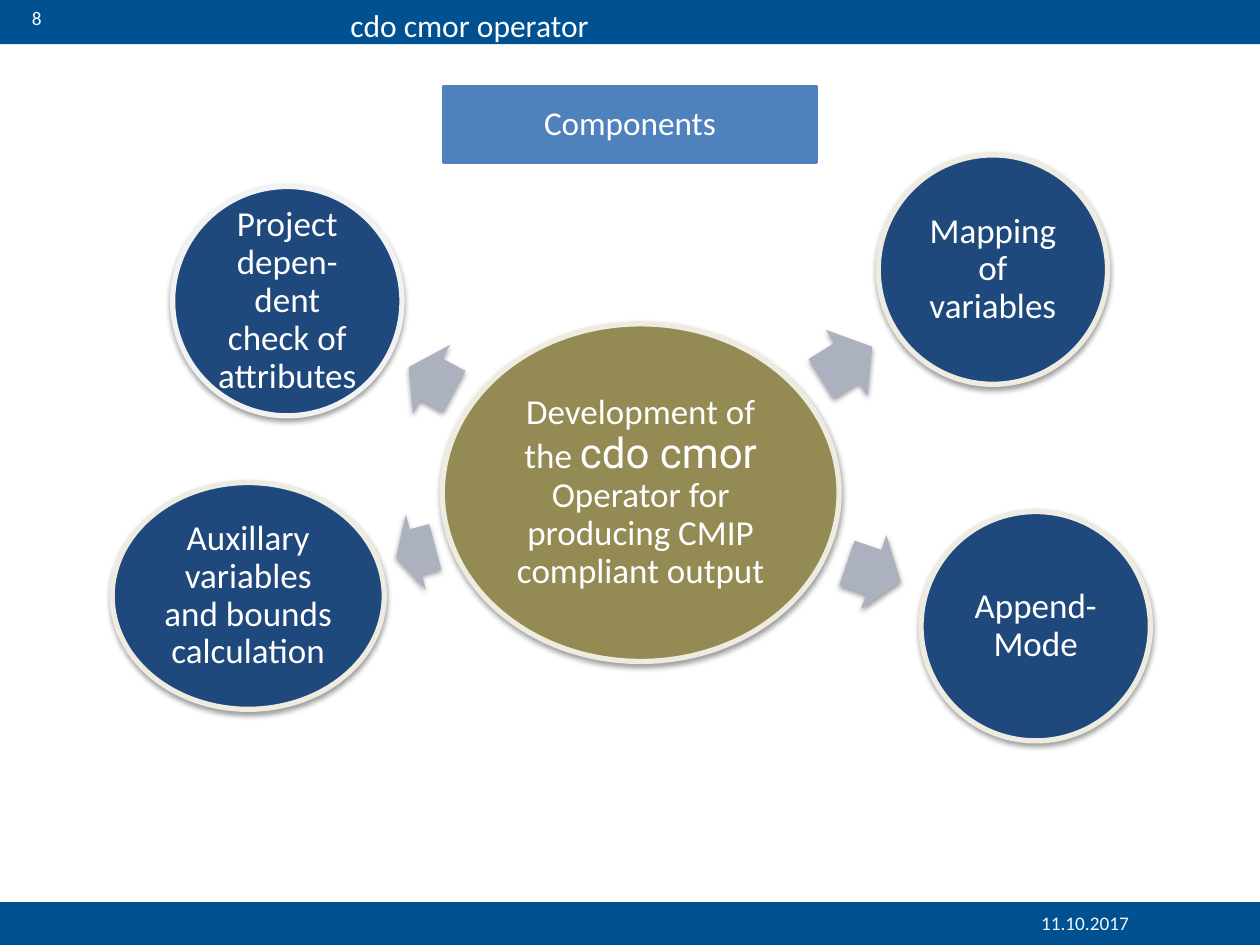
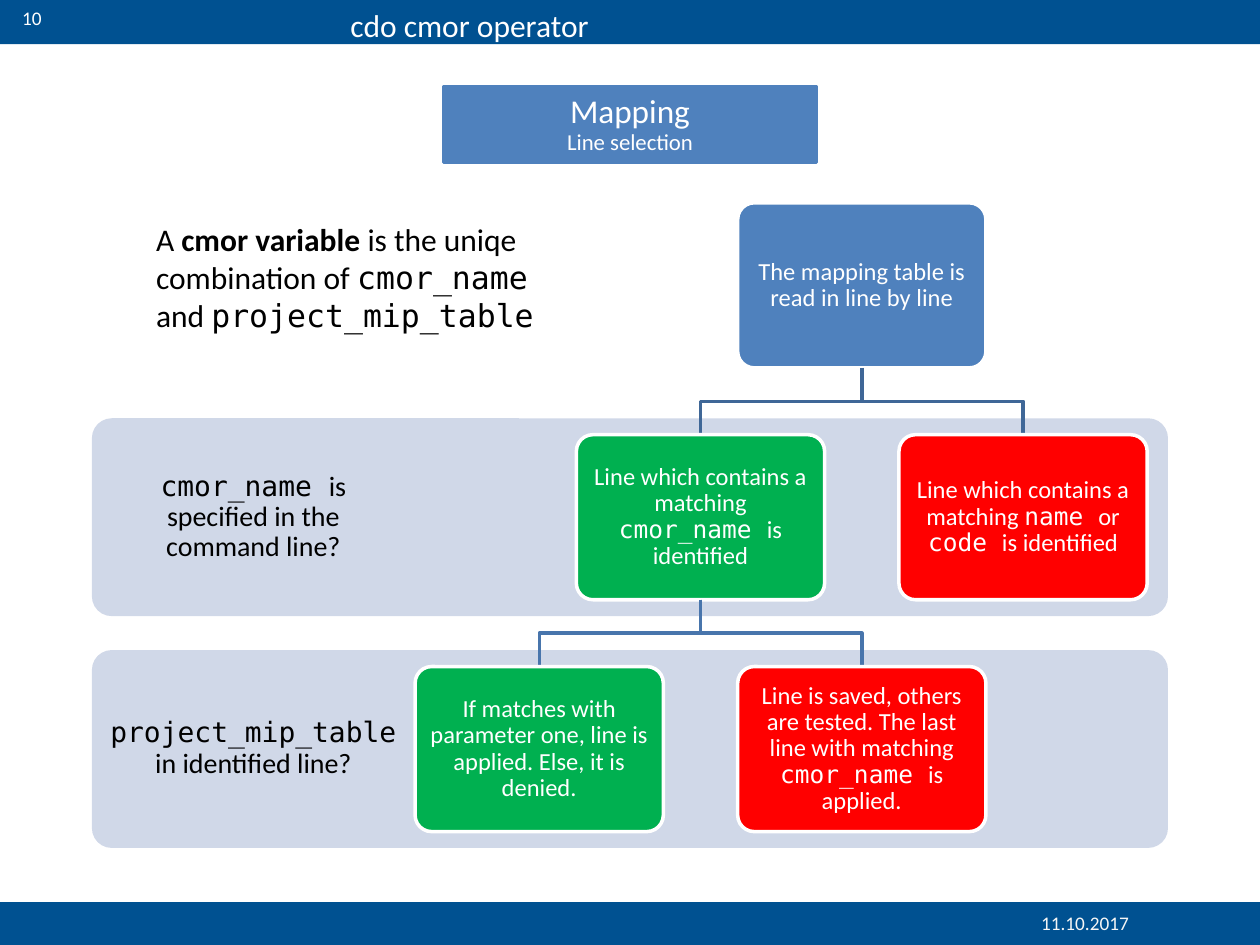
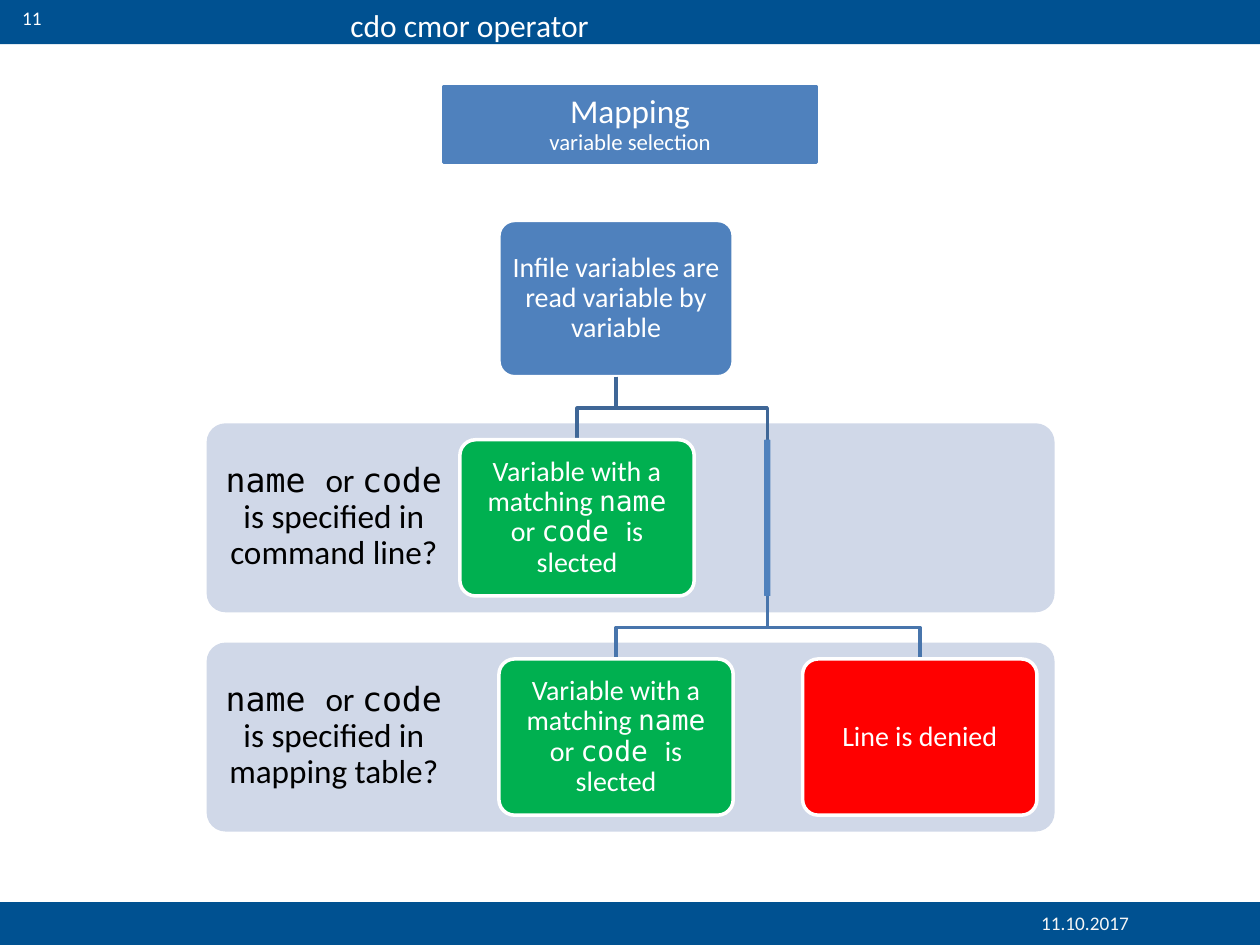
from dataclasses import dataclass

from lxml import etree
from pptx import Presentation
from pptx.dml.color import RGBColor
from pptx.enum.shapes import MSO_SHAPE as Shape
from pptx.enum.text import MSO_ANCHOR as Anchor, MSO_AUTO_SIZE as AutoSize, PP_ALIGN as Align
from pptx.oxml.ns import qn
from pptx.util import Inches, Pt


@dataclass(frozen=True)
class Theme:
    band: str = "005191"
    white: str = "FFFFFF"
    date: str = "F6F6F6"
    black: str = "000000"
    blue: str = "4F81BD"
    navy: str = "1F497D"
    olive: str = "948A54"
    cream: str = "EEECE1"
    pale: str = "F2F2F2"
    arrow: str = "ACB1BF"
    lane: str = "D0D8E8"
    yes: str = "00B050"
    no: str = "FF0000"
    links: tuple = ("3F6797", "4875AC")
    font: str = "Calibri"
    mono: str = "DejaVu Sans Mono"
    accent: str = "Roboto"
    small: int = 11
    subheading: int = 13
    fine: int = 14
    medium: int = 16
    title: int = 18
    heading: int = 19
    circle: int = 20
    large: int = 24


THEME = Theme()


@dataclass(frozen=True)
class Span:
    """A stretch of text that departs from the style of its box."""
    text: str
    font: str = THEME.font
    size: int = None
    bold: bool = False


def mono(text):
    return Span(text, THEME.mono)


@dataclass
class Tree:
    """Measures of a decision tree, in inches."""
    left: float
    width: float
    top: float
    node_width: float
    node_height: float
    row_step: float
    node_size: int
    label_size: int
    node_inset: float
    label_inset: float
    lane_pad: float = 0.13

    def row_top(self, row):
        return self.top + row * self.row_step


class Builder:
    def __init__(self, theme):
        self.theme = theme
        self.deck = Presentation()
        self.deck.slide_width, self.deck.slide_height = Inches(10), Inches(7.5)
        self.page = None

    def start_page(self, number):
        theme = self.theme
        self.page = self.deck.slides.add_slide(self.deck.slide_layouts[5])
        title = self.page.shapes.title
        title.left, title.top, title.width, title.height = map(Inches, (2.68, 0, 4.65, 0.4))
        self.fill_text(title, ["cdo cmor operator"], theme.title, align=Align.LEFT,
                       anchor=Anchor.TOP)
        for top, height in ((7.16, 0.34), (0, 0.35)):
            band = self.shape(Shape.RECTANGLE, (0, top, 10, height), theme.band)
            title.element.addprevious(band.element)
        self.text((0.01, 0, 0.42, 0.35), [str(number)], theme.small, theme.white, align=Align.RIGHT)
        self.text((7.91, 7.15, 1.15, 0.35), ["11.10.2017"], theme.small, theme.date,
                  align=Align.RIGHT, anchor=Anchor.MIDDLE)

    def fill_text(self, box, spans, size, colour=THEME.white, align=Align.CENTER,
                  anchor=Anchor.MIDDLE, insets=(0.1, 0.05), spacing=None):
        frame = box.text_frame
        frame.word_wrap, frame.auto_size = True, AutoSize.NONE
        frame.vertical_anchor = anchor
        frame.margin_left = frame.margin_right = Inches(insets[0])
        frame.margin_top = frame.margin_bottom = Inches(insets[1])
        para = frame.paragraphs[0]
        para.alignment, para.line_spacing = align, spacing
        for item in spans:
            if item == "\n":
                para.add_line_break()
                continue
            span = Span(item) if isinstance(item, str) else item
            run = para.add_run()
            run.text = span.text
            run.font.name, run.font.size = span.font, Pt(span.size or size)
            run.font.bold = span.bold
            run.font.color.rgb = RGBColor.from_string(colour)

    def text(self, place, spans, size, colour, align=Align.LEFT, anchor=Anchor.TOP, **style):
        box = self.page.shapes.add_textbox(*map(Inches, place))
        self.fill_text(box, spans, size, colour, align, anchor, **style)

    def shape(self, kind, place, fill, line=None, line_width=2, shadow=False):
        shape = self.page.shapes.add_shape(kind, *map(Inches, place))
        shape.fill.solid()
        shape.fill.fore_color.rgb = RGBColor.from_string(fill)
        if line:
            shape.line.color.rgb = RGBColor.from_string(line)
            shape.line.width = Pt(line_width)
        else:
            shape.line.fill.background()
        shape.shadow.inherit = False
        if shadow:
            self.cast_shadow(shape)
        return shape

    def cast_shadow(self, shape):
        effects = shape.element.spPr.find(qn("a:effectLst"))
        outer = etree.SubElement(effects, qn("a:outerShdw"), blurRad=str(Pt(3.1)),
                                 dist=str(Pt(1.6)), dir="5400000", rotWithShape="0")
        colour = etree.SubElement(outer, qn("a:srgbClr"), val=self.theme.black)
        etree.SubElement(colour, qn("a:alpha"), val="38000")

    def heading(self, text, subheading=None):
        theme = self.theme
        box = self.shape(Shape.RECTANGLE, (3.52, 0.69, 2.96, 0.6), theme.blue, theme.blue)
        spans = [text]
        if subheading:
            spans += ["\n", Span(subheading, size=theme.subheading)]
        self.fill_text(box, spans, theme.heading, insets=(0.15, 0.08), spacing=0.9)

    def ellipse(self, place, spans, fill, line):
        ellipse = self.shape(Shape.OVAL, place, fill, line, 3, shadow=True)
        self.fill_text(ellipse, spans, self.theme.circle, insets=(0.03, 0.03), spacing=0.9)

    def arrow(self, place, rotation):
        arrow = self.shape(Shape.RIGHT_ARROW, place, self.theme.arrow, shadow=True)
        arrow.adjustments[0], arrow.adjustments[1] = 0.6, 0.5
        arrow.rotation = rotation

    def rounded(self, place, fill, line=None):
        box = self.shape(Shape.ROUNDED_RECTANGLE, place, fill, line)
        box.adjustments[0] = 0.1
        return box

    def lane(self, tree, row, spans):
        """Draw the stripe behind a row, with its question in the left 30 percent."""
        top = tree.row_top(row) - tree.lane_pad
        height = tree.node_height + 2 * tree.lane_pad
        self.rounded((tree.left, top, tree.width, height), self.theme.lane)
        self.text((tree.left, top, 0.3 * tree.width, height), spans, tree.label_size,
                  self.theme.black, Align.CENTER, Anchor.MIDDLE,
                  insets=(tree.label_inset,) * 2, spacing=0.9)

    def node(self, tree, row, centre, spans, fill, parent=None):
        """Draw a node and the link to its parent's centre in the row above."""
        if parent is not None:
            self.link(tree, row, parent, centre)
        place = (centre - tree.node_width / 2, tree.row_top(row), tree.node_width, tree.node_height)
        box = self.rounded(place, fill, self.theme.white)
        self.fill_text(box, spans, tree.node_size, insets=(tree.node_inset,) * 2, spacing=0.9)

    def link(self, tree, row, parent, child):
        end = tree.row_top(row)
        start = tree.row_top(row - 1) + tree.node_height
        middle = (start + end) / 2
        points = [(parent, start), (parent, middle), (child, middle), (child, end)]
        first, *rest = [(Inches(x), Inches(y)) for x, y in points]
        outline = self.page.shapes.build_freeform(*first)
        outline.add_line_segments(rest, close=False)
        link = outline.convert_to_shape()
        link.fill.background()
        link.line.color.rgb = RGBColor.from_string(self.theme.links[row - 1])
        link.line.width = Pt(2)
        link.shadow.inherit = False


def components_page(builder):
    theme = builder.theme
    builder.start_page(8)
    builder.ellipse((3.51, 2.57, 3.15, 2.68),
                    ["Development of the ", Span("cdo cmor ", theme.accent, theme.large),
                     "Operator for producing CMIP compliant output"], theme.olive, theme.cream)
    components = [
        ("Project depen-dent check of attributes", (1.37, 1.48, 1.82, 1.82), theme.pale,
         (3.22, 2.7, 0.41, 0.62), 208.3),
        ("Mapping of variables", (6.97, 1.23, 1.82, 1.82), theme.cream,
         (6.48, 2.57, 0.48, 0.62), 327.8),
        ("Append-Mode", (7.31, 4.06, 1.82, 1.82), theme.cream,
         (6.71, 4.23, 0.45, 0.62), 18.9),
        ("Auxillary variables and bounds calculation", (0.89, 3.83, 2.16, 1.8), theme.cream,
         (3.14, 4.07, 0.32, 0.62), 165.2),
    ]
    for text, place, line, arrow_place, rotation in components:
        builder.arrow(arrow_place, rotation)
        builder.ellipse(place, [text], theme.navy, line)
    builder.heading("Components")


def line_selection_page(builder):
    theme = builder.theme
    builder.start_page(10)
    builder.heading("Mapping", "Line selection")
    tree = Tree(left=0.73, width=8.54, top=1.61, node_width=1.97, node_height=1.31, row_step=1.84,
                node_size=theme.fine, label_size=theme.medium, node_inset=0.06, label_inset=0.12)
    builder.lane(tree, 1, [mono("cmor_name "), "is specified in the command line?"])
    builder.lane(tree, 2, [mono("project_mip_table"), " in identified line?"])
    root, half_step = 6.84, 1.28
    left, right = root - half_step, root + half_step
    builder.node(tree, 0, root, ["The mapping table is read in line by line"], theme.blue)
    builder.node(tree, 1, left, ["Line which contains a matching ", mono("cmor_name "),
                                 "is identified"], theme.yes, root)
    builder.node(tree, 2, left - half_step,
                 ["If matches with parameter one, line is applied. Else, it is denied."],
                 theme.yes, left)
    builder.node(tree, 2, left + half_step,
                 ["Line is saved, others are tested. The last line with matching ",
                  mono("cmor_name "), "is applied."], theme.no, left)
    builder.node(tree, 1, right, ["Line which contains a matching ", mono("name "), "or ",
                                  mono("code "), "is identified"], theme.no, root)
    builder.text((1.14, 1.7, 3.23, 1.01),
                 ["A ", Span("cmor variable ", bold=True), "is the uniqe combination of ",
                  mono("cmor_name "), "and ", mono("project_mip_table")],
                 theme.title, theme.black)


def variable_selection_page(builder):
    theme = builder.theme
    builder.start_page(11)
    builder.heading("Mapping", "variable selection")
    tree = Tree(left=1.64, width=6.73, top=1.75, node_width=1.86, node_height=1.24, row_step=1.74,
                node_size=theme.medium, label_size=theme.heading, node_inset=0.07, label_inset=0.15)
    name_or_code = [mono("name "), "or ", mono("code ")]
    for row, source in ((1, "command line"), (2, "mapping table")):
        builder.lane(tree, row, name_or_code + [f"is specified in {source}?"])
    selected = ["Variable with a matching ", *name_or_code, "is slected"]
    root, bar, bar_width = 4.89, 6.09, 0.05
    builder.node(tree, 0, root, ["Infile variables are read variable by variable"], theme.blue)
    builder.node(tree, 1, 4.58, selected, theme.yes, root)
    builder.link(tree, 1, root, bar)
    builder.rounded((bar - bar_width / 2, tree.row_top(1), bar_width, tree.node_height), theme.blue)
    builder.node(tree, 2, root, selected, theme.yes, bar)
    builder.node(tree, 2, 7.3, ["Line is denied"], theme.no, bar)


def main():
    builder = Builder(THEME)
    components_page(builder)
    line_selection_page(builder)
    variable_selection_page(builder)
    builder.deck.save("out.pptx")


if __name__ == "__main__":
    main()
